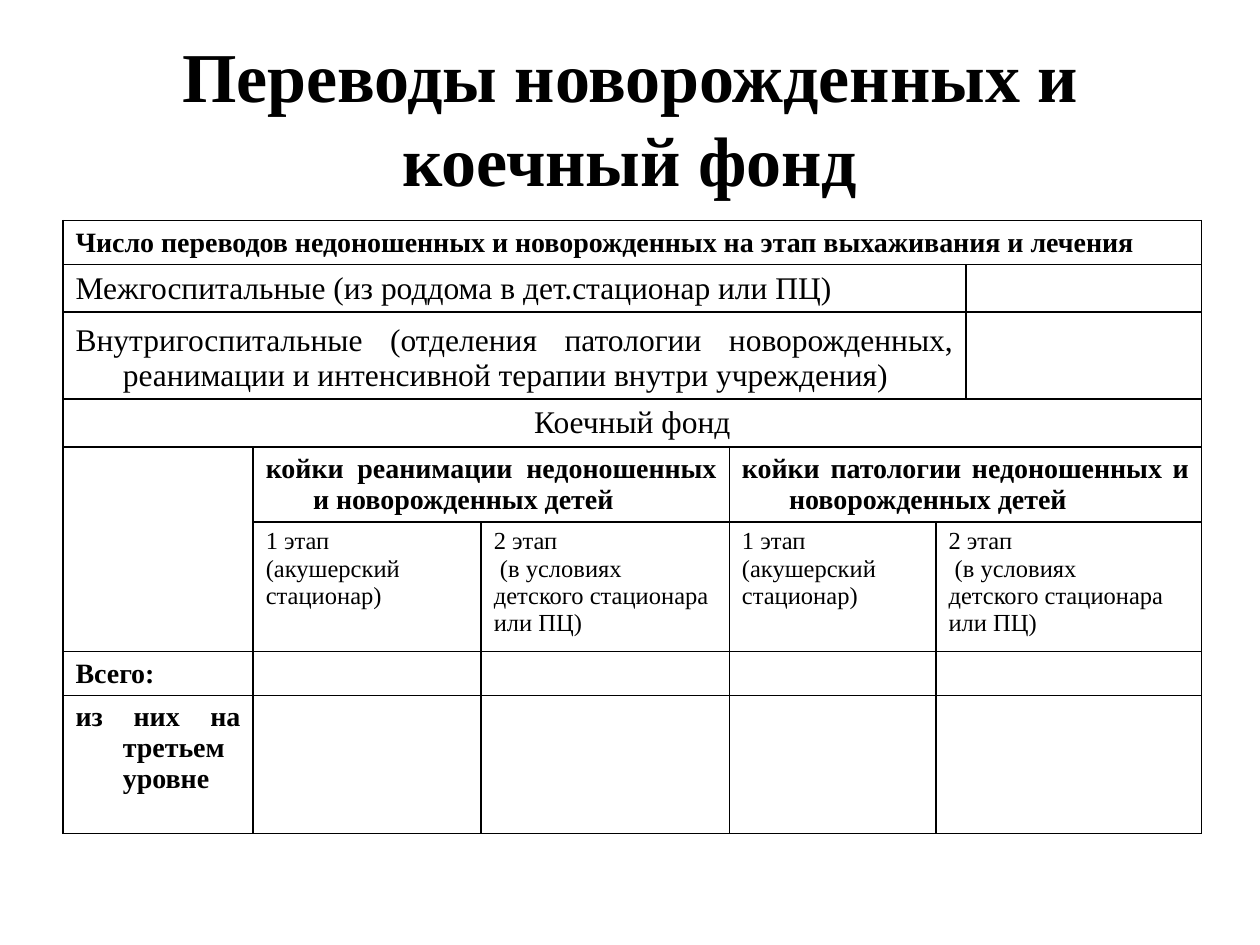
from lxml.etree import SubElement
from pptx import Presentation
from pptx.dml.color import RGBColor
from pptx.enum.text import MSO_ANCHOR as Anchor, PP_ALIGN as Align
from pptx.oxml.ns import qn
from pptx.util import Pt

THEME = {"font": "Times New Roman", "ink": "000000", "line": 1,
         "title": 40, "body": 18, "head": 16, "small": 14}
HANG = 27
TITLE = "Переводы новорожденных и коечный фонд"
TITLE_BOX = (36, 21.6, 648, 90)
TABLE_POS = (36, 126)
COLS = [108.7, 130.3, 141.8, 118.1, 16.6, 134.6]
ROWS = [25.2, 26.6, 49.7, 27.4, 42.5, 74.2, 24.5, 78.5, 38.2]

STAGE_1 = "1 этап\n(акушерский\nстационар)"
STAGE_2 = "2 этап\n (в условиях\nдетского стационара или ПЦ)"

# style: (size key, bold, alignment, anchor, hanging indent)
STYLES = {
    "section": ("head", True, Align.JUSTIFY, Anchor.BOTTOM, HANG),
    "line": ("body", False, Align.JUSTIFY, Anchor.BOTTOM, HANG),
    "center": ("body", False, Align.CENTER, Anchor.BOTTOM, HANG),
    "group": ("head", True, Align.JUSTIFY, Anchor.TOP, HANG),
    "stage_1": ("small", False, Align.LEFT, Anchor.TOP, HANG),
    "stage_2": ("small", False, Align.LEFT, Anchor.TOP, 0),
}
# (row, column): (text, style)
CELLS = {
    (0, 0): ("Число переводов недоношенных и новорожденных на этап выхаживания и лечения", "section"),
    (1, 0): ("Межгоспитальные (из роддома в дет.стационар или ПЦ) ", "line"),
    (2, 0): ("Внутригоспитальные (отделения патологии новорожденных, "
             "реанимации и интенсивной терапии внутри учреждения)", "line"),
    (3, 0): ("Коечный фонд", "center"),
    (4, 1): ("койки реанимации недоношенных и новорожденных детей", "group"),
    (4, 3): ("койки патологии недоношенных и новорожденных детей", "group"),
    (5, 1): (STAGE_1, "stage_1"),
    (5, 2): (STAGE_2, "stage_2"),
    (5, 3): (STAGE_1, "stage_1"),
    (5, 4): (STAGE_2, "stage_2"),
    (6, 0): ("Всего:", "section"),
    (7, 0): ("из них на третьем уровне", "section"),
}
# first cell, last cell
MERGES = [((0, 0), (0, 5)), ((1, 0), (1, 4)), ((2, 0), (2, 4)), ((3, 0), (3, 5)),
          ((4, 0), (5, 0)), ((4, 1), (4, 2)), ((4, 3), (4, 5)),
          ((5, 4), (5, 5)), ((6, 4), (6, 5)), ((7, 4), (7, 5))]


def style_run(r, size, bold):
    r.font.name = THEME["font"]
    r.font.size = Pt(THEME[size])
    r.font.bold = bold
    r.font.color.rgb = RGBColor.from_string(THEME["ink"])


def set_borders(cell, sides):
    """Draw the named sides (L, R, T, B) and clear the others."""
    tc_pr = cell._tc.get_or_add_tcPr()
    for i, side in enumerate("LRTB"):
        ln = SubElement(tc_pr, qn(f"a:ln{side}"), w=str(Pt(THEME["line"])))
        if side in sides:
            fill = SubElement(ln, qn("a:solidFill"))
            SubElement(fill, qn("a:srgbClr"), val=THEME["ink"])
        else:
            SubElement(ln, qn("a:noFill"))
        tc_pr.insert(i, ln)


def fill_cell(cell, text, style):
    size, bold, align, anchor, hang = STYLES[style]
    tf = cell.text_frame
    tf.text = text
    cell.vertical_anchor = anchor
    for p in tf.paragraphs:
        p.alignment = align
        p_pr = p._p.get_or_add_pPr()
        p_pr.set("marL", str(Pt(hang)))
        p_pr.set("indent", str(Pt(-hang)))
        for r in p.runs:
            style_run(r, size, bold)


def add_title(slide):
    sp = slide.shapes.title
    sp.left, sp.top, sp.width, sp.height = map(Pt, TITLE_BOX)
    tf = sp.text_frame
    tf.text = TITLE
    tf.word_wrap = True
    tf.vertical_anchor = Anchor.MIDDLE
    p = tf.paragraphs[0]
    p.alignment = Align.CENTER
    style_run(p.runs[0], "title", True)


def add_bed_table(slide):
    left, top = TABLE_POS
    frame = slide.shapes.add_table(len(ROWS), len(COLS), Pt(left), Pt(top),
                                   Pt(sum(COLS)), Pt(sum(ROWS)))
    table = frame.table
    table.first_row = table.horz_banding = False
    for col, width in zip(table.columns, COLS):
        col.width = Pt(width)
    for row, height in zip(table.rows, ROWS):
        row.height = Pt(height)
    for first, last in MERGES:
        table.cell(*first).merge(table.cell(*last))
    for i in range(len(ROWS)):
        for j in range(len(COLS)):
            cell = table.cell(i, j)
            cell.fill.background()
            set_borders(cell, "T" if i == len(ROWS) - 1 else "LRTB")
            if (i, j) in CELLS:
                fill_cell(cell, *CELLS[i, j])
            else:
                end = SubElement(cell.text_frame.paragraphs[0]._p, qn("a:endParaRPr"))
                end.set("sz", str(THEME["small"] * 100))
    table.cell(7, 0).margin_bottom = Pt(22)


def main():
    prs = Presentation()
    prs.slide_width, prs.slide_height = Pt(720), Pt(540)
    slide = prs.slides.add_slide(prs.slide_layouts[5])
    add_title(slide)
    add_bed_table(slide)
    prs.save("out.pptx")


if __name__ == "__main__":
    main()
